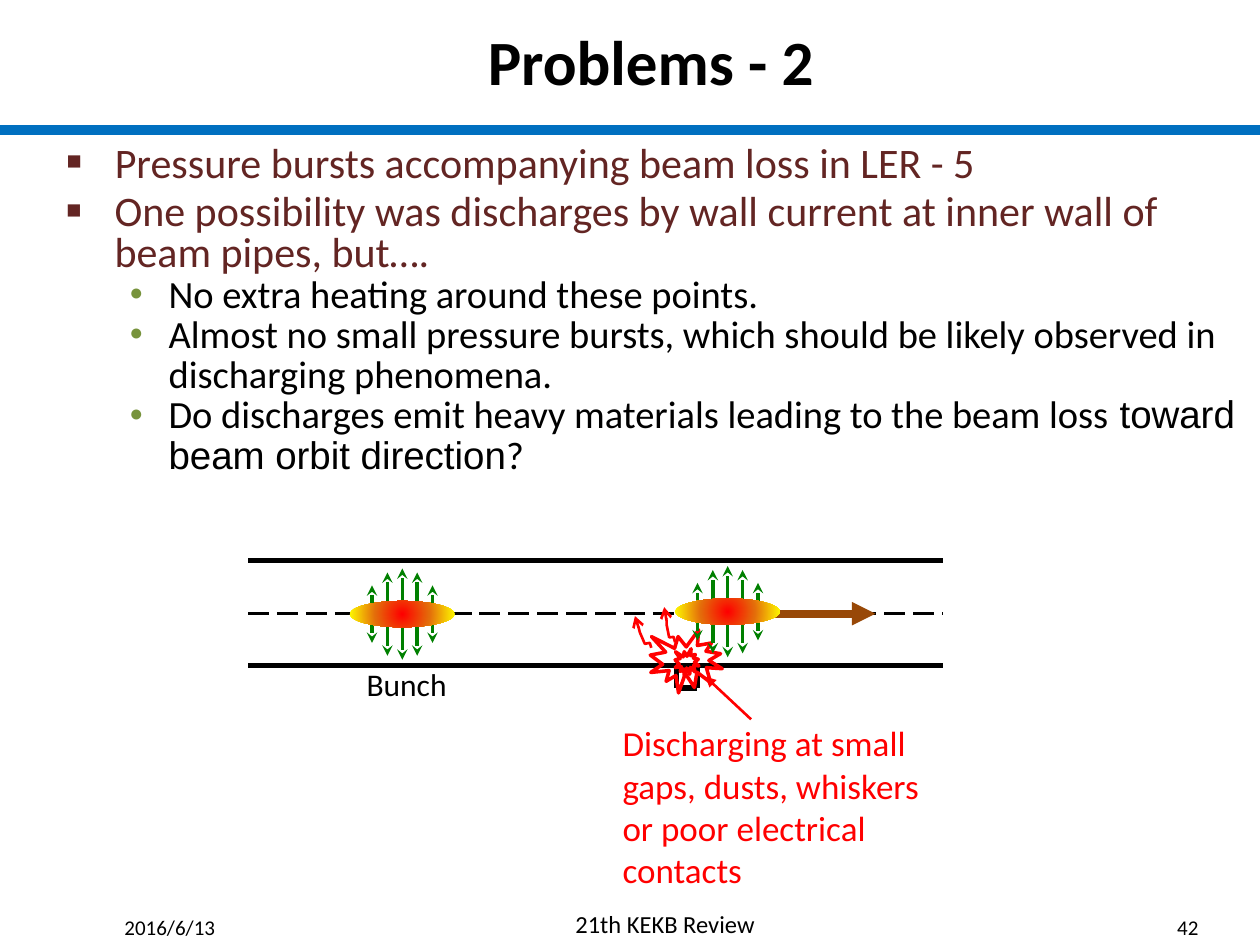
from dataclasses import dataclass

from pptx import Presentation
from pptx.dml.color import RGBColor
from pptx.enum.dml import MSO_LINE_DASH_STYLE as Dash
from pptx.enum.shapes import MSO_CONNECTOR as Connector, MSO_SHAPE as Preset
from pptx.enum.text import MSO_ANCHOR as Anchor, MSO_AUTO_SIZE as AutoSize, PP_ALIGN as Align
from pptx.oxml import parse_xml
from pptx.oxml.ns import nsdecls, qn
from pptx.oxml.xmlchemy import OxmlElement
from pptx.util import Cm, Pt


@dataclass(frozen=True)
class Theme:
    font: str = "Calibri"
    alt_font: str = "Arial"
    black: str = "000000"
    blue: str = "0070C0"
    maroon: str = "632523"
    olive: str = "77933C"
    red: str = "FF0000"
    green: str = "008000"
    brown: str = "984807"
    orange: str = "E46C0A"
    yellow: str = "FFFF00"
    title: int = 36
    head: int = 24
    item: int = 22
    note: int = 20
    label: int = 18
    footer: int = 14
    small: int = 12


THEME = Theme()
# Indent, hanging, bullet, bullet colour, text colour and size for each list level
LEVELS = (
    (0.97, 0.97, "■", THEME.maroon, THEME.maroon, THEME.head),
    (2.06, 0.79, "●", THEME.olive, THEME.black, THEME.item),
)
# Field arrows of a bunch: sideways offset, start and end distance from its centre
FIELD_ARROWS = ((-0.61, 0.17, 0.58), (-0.3, 0.18, 0.84), (0, 0.27, 0.92),
                (0.3, 0.18, 0.84), (0.61, 0.17, 0.58))
PIPE = (5.0, 19.0)


def place(shape, left, top, width, height):
    shape.left, shape.top, shape.width, shape.height = map(Cm, (left, top, width, height))


def style_font(font, size, color, bold=False, name=THEME.font):
    font.name, font.size, font.bold = name, Pt(size), bold
    font.color.rgb = RGBColor.from_string(color)


def style_line(shape, color, width, arrow=None, dash=None):
    """Colour the outline; arrow names the arrowhead at its end."""
    shape.line.color.rgb = RGBColor.from_string(color)
    shape.line.width = Pt(width)
    if dash:
        shape.line.dash_style = dash
    if arrow:
        shape.line._get_or_add_ln().append(
            parse_xml(f'<a:tailEnd {nsdecls("a")} type="{arrow}"/>'))


def add_line(shapes, start, end, color, width, arrow=None, dash=None):
    line = shapes.add_connector(Connector.STRAIGHT, *map(Cm, (*start, *end)))
    style_line(line, color, width, arrow, dash)
    line._element.spPr.append(OxmlElement("a:effectLst"))


def add_text(page, area, text, size, color=THEME.black, align=Align.LEFT, wrap=True, indent=0):
    box = page.shapes.add_textbox(*map(Cm, area))
    box.text_frame.word_wrap = wrap
    para = box.text_frame.paragraphs[0]
    para.text, para.alignment = text, align
    para._p.get_or_add_pPr().set("marL", str(Cm(indent)))
    style_font(para.runs[0].font, size, color)


def fill_list(frame, items):
    """Write (level, text parts) items; every second part is in the other font."""
    frame.word_wrap, frame.auto_size = True, AutoSize.NONE
    for index, (level, parts) in enumerate(items):
        para = frame.add_paragraph() if index else frame.paragraphs[0]
        indent, hanging, bullet, bullet_color, color, size = LEVELS[level]
        para.level = level
        para.line_spacing, para.space_before = Pt(23), Pt(0)
        props = para._p.get_or_add_pPr()
        props.set("marL", str(Cm(indent)))
        props.set("indent", str(-Cm(hanging)))
        for tag in (f'buClr {nsdecls("a")}><a:srgbClr val="{bullet_color}"/></a:buClr',
                    f'buSzPct {nsdecls("a")} val="60000"/',
                    f'buFont {nsdecls("a")} typeface="{THEME.alt_font}"/',
                    f'buChar {nsdecls("a")} char="{bullet}"/'):
            props.append(parse_xml(f"<a:{tag}>"))
        for number, part in enumerate(parts):
            span = para.add_run()
            span.text = part
            name = THEME.alt_font if number % 2 else THEME.font
            style_font(span.font, size, color, name=name)


def fill_radial(shape, colors):
    """Blend the colours from the centre of the shape to its edge."""
    shape.fill.background()
    stops = "".join(
        f'<a:gs pos="{100000 * i // (len(colors) - 1)}"><a:srgbClr val="{color}"/></a:gs>'
        for i, color in enumerate(colors))
    gradient = parse_xml(
        f'<a:gradFill {nsdecls("a")} rotWithShape="1"><a:gsLst>{stops}</a:gsLst>'
        '<a:path path="circle"><a:fillToRect l="50000" t="50000" r="50000" b="50000"/>'
        '</a:path></a:gradFill>')
    props = shape._element.spPr
    props.replace(props.find(qn("a:noFill")), gradient)


def add_bunch(page, x, y):
    """Draw a bunch centred on x, y with its field arrows."""
    shapes = page.shapes.add_group_shape().shapes
    for side in (-1, 1):
        for offset, near, far in FIELD_ARROWS:
            add_line(shapes, (x + offset, y + side * near), (x + offset, y + side * far),
                     THEME.green, 2, "stealth")
    width, height = 2.11, 0.53
    core = shapes.add_shape(Preset.OVAL, *map(
        Cm, (x - width / 2, y - height / 2, width, height)))
    core.shadow.inherit = False
    fill_radial(core, (THEME.red, THEME.orange, THEME.yellow))
    core.line.fill.background()


def add_bursts(page, areas):
    shapes = page.shapes.add_group_shape().shapes
    for area in areas:
        burst = shapes.add_shape(Preset.EXPLOSION1, *map(Cm, area))
        burst.shadow.inherit = False
        burst.fill.background()
        style_line(burst, THEME.red, 2)


def add_emission(page, points):
    """Draw the bent arrow of material leaving the discharge."""
    start, *rest = [(Cm(x), Cm(y)) for x, y in points]
    builder = page.shapes.build_freeform(*start)
    builder.add_line_segments(rest, close=False)
    trace = builder.convert_to_shape()
    trace.shadow.inherit = False
    trace.fill.background()
    style_line(trace, THEME.red, 1.5, "arrow")


def add_beam_pipe(page):
    shapes = page.shapes
    left, right = PIPE
    for y, width, dash in ((11.3, 3, None), (12.37, 1.5, Dash.LONG_DASH), (13.41, 3, None)):
        add_line(shapes, (left, y), (right, y), THEME.black, width, dash=dash)
    add_bunch(page, 8.11, 12.38)
    add_line(shapes, (15.54, 12.37), (17.65, 12.37), THEME.brown, 4.5, "triangle")
    gap = ((13.64, 13.39), (13.64, 13.87), (14.06, 13.87), (14.06, 13.39))
    for start, end in zip(gap, gap[1:]):
        add_line(shapes, start, end, THEME.black, 3)
    add_bursts(page, ((13.11, 12.7, 1.45, 1.27), (13.61, 13.08, 0.48, 0.56)))
    add_text(page, (7.14, 13.28, 2.16, 1.02), "Bunch", THEME.label, wrap=False)
    add_bunch(page, 14.67, 12.33)
    add_emission(page, ((13.13, 13.06), (13.1, 12.96), (13, 12.98),
                        (12.9, 12.75), (12.88, 12.67), (12.8, 12.42)))
    add_emission(page, ((13.61, 12.95), (13.58, 12.84), (13.49, 12.85),
                        (13.44, 12.6), (13.44, 12.52), (13.39, 12.24)))


def add_footer(page):
    add_text(page, (2.26, 18.31, 3.86, 0.76), "2016/6/13", THEME.small)
    add_text(page, (11.35, 18.21, 5.82, 0.86), "21th KEKB Review", THEME.footer)
    add_text(page, (23.39, 18.31, 1.02, 0.76), "42", THEME.small, align=Align.RIGHT, wrap=False)


def main():
    deck = Presentation()
    deck.slide_width, deck.slide_height = Cm(25.4), Cm(19.05)
    page = deck.slides.add_slide(deck.slide_layouts[1])
    title, body = page.placeholders
    place(title, 1.27, 0.13, 23.7, 2.16)
    title.text_frame.text = "Problems - 2"
    title.text_frame.vertical_anchor = Anchor.MIDDLE
    title.text_frame.paragraphs[0].alignment = Align.CENTER
    style_font(title.text_frame.paragraphs[0].runs[0].font, THEME.title, THEME.black, bold=True)
    place(body, 1.09, 2.82, 24.31, 1.19)
    fill_list(body.text_frame, [(0, ["Pressure bursts accompanying beam loss in LER - 5"])])
    add_line(page.shapes, (0, 2.62), (25.4, 2.62), THEME.blue, 6)
    reasons = page.shapes.add_textbox(*map(Cm, (1.09, 3.81, 24.31, 5.99)))
    fill_list(reasons.text_frame, [
        (0, ["One possibility was discharges by wall current at inner wall of beam pipes, but…."]),
        (1, ["No extra heating around these points."]),
        (1, ["Almost no small pressure bursts, which should be likely observed in "
             "discharging phenomena."]),
        (1, ["Do discharges emit heavy materials leading to the beam loss",
             " toward beam orbit direction", "?"]),
    ])
    add_text(page, (11.33, 14.43, 7.8, 1.78),
             "Discharging at small gaps, dusts, whiskers or poor electrical contacts",
             THEME.note, THEME.red, indent=0.97)
    add_line(page.shapes, (15.14, 14.5), (14.22, 13.64), THEME.red, 1.5, "triangle")
    add_beam_pipe(page)
    add_footer(page)
    deck.save("out.pptx")


if __name__ == "__main__":
    main()
